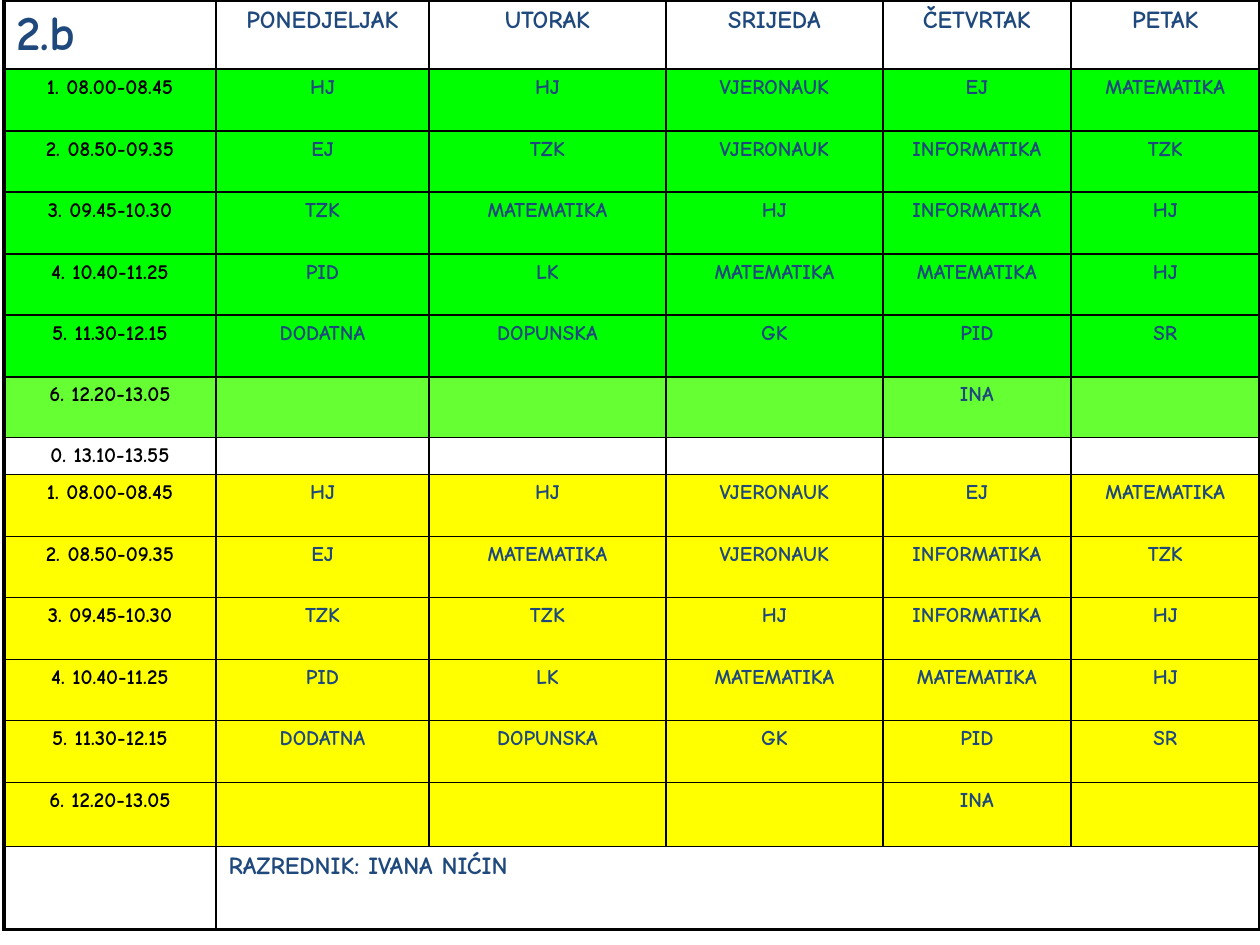
import pptx
import pptx.util
import pptx.dml.color
import pptx.enum.text
import pptx.oxml
import pptx.oxml.ns

RGB = pptx.dml.color.RGBColor
NAVY, BLACK, WHITE = RGB(0x1F, 0x49, 0x7D), RGB(0, 0, 0), RGB(255, 255, 255)
GREEN, LIME, YELLOW = RGB(0, 255, 0), RGB(0x66, 255, 0x33), RGB(255, 255, 0)
FONT = "Comic Neue"
PX = 914400 // 126
THIN, THICK = 1, 2.25

# Content
HEADER = ["2.b", "PONEDJELJAK", "UTORAK", "SRIJEDA", "ČETVRTAK", "PETAK"]
TIMES = ["1. 08.00-08.45", "2. 08.50-09.35", "3. 09.45-10.30",
         "4. 10.40-11.25", "5. 11.30-12.15", "6. 12.20-13.05"]
BREAK = ["0. 13.10-13.55", "", "", "", "", ""]
FOOTER = ["", "RAZREDNIK: IVANA NIĆIN"]
DAYS = [
    ["HJ", "EJ", "TZK", "PID", "DODATNA", ""],
    ["HJ", "TZK", "MATEMATIKA", "LK", "DOPUNSKA", ""],
    ["VJERONAUK", "VJERONAUK", "HJ", "MATEMATIKA", "GK", ""],
    ["EJ", "INFORMATIKA", "INFORMATIKA", "MATEMATIKA", "PID", "INA"],
    ["MATEMATIKA", "TZK", "HJ", "HJ", "SR", ""],
]
# The second shift differs only on Tuesday
TUESDAY_2 = ["HJ", "MATEMATIKA", "TZK", "LK", "DOPUNSKA", ""]
DAYS_2 = [DAYS[0], TUESDAY_2] + DAYS[2:]


def shift(days):
    return [list(row) for row in zip(TIMES, *days)]


ROWS = [HEADER] + shift(DAYS) + [BREAK] + shift(DAYS_2) + [FOOTER]
FILLS = [None] + [GREEN] * 5 + [LIME, WHITE] + [YELLOW] * 6 + [None]
COL_W = [212, 213, 237, 217, 188, 189]
ROW_H = [69] + [62, 61] * 3 + [37] + [62, 61] * 2 + [62, 64, 83]
LAST_ROW, LAST_COL = len(ROW_H) - 1, len(COL_W) - 1


def add_border(cell, side, width):
    ns = pptx.oxml.ns.nsdecls("a")
    cell._tc.get_or_add_tcPr().append(pptx.oxml.parse_xml(
        f'<a:ln{side} {ns} w="{int(width * 12700)}" cap="flat" cmpd="sng">'
        f'<a:solidFill><a:srgbClr val="{BLACK}"/></a:solidFill>'
        f'<a:prstDash val="solid"/></a:ln{side}>'))


def write(cell, text, size, color, align):
    p = cell.text_frame.paragraphs[0]
    p.alignment = align
    f = p.font
    f.name, f.size, f.bold, f.color.rgb = FONT, pptx.util.Pt(size), True, color
    if text:
        p.add_run().text = text
    else:  # keeps an empty row from growing
        p._p.append(pptx.oxml.parse_xml(
            f'<a:endParaRPr {pptx.oxml.ns.nsdecls("a")} sz="{size * 100}"/>'))


prs = pptx.Presentation()
prs.slide_width, prs.slide_height = 1260 * PX, 945 * PX
s = prs.slides.add_slide(prs.slide_layouts[6])

# Timetable grid
table = s.shapes.add_table(len(ROW_H), len(COL_W), 4 * PX, 0,
                           sum(COL_W) * PX, sum(ROW_H) * PX).table
table.first_row = table.horz_banding = False
for column, w in zip(table.columns, COL_W):
    column.width = w * PX
for row, h in zip(table.rows, ROW_H):
    row.height = h * PX
table.cell(LAST_ROW, 1).merge(table.cell(LAST_ROW, LAST_COL))

# Cells
ALIGN = pptx.enum.text.PP_ALIGN
for i, (texts, fill) in enumerate(zip(ROWS, FILLS)):
    for j in range(len(COL_W)):
        cell = table.cell(i, j)
        at_right = j == LAST_COL or (i == LAST_ROW and j > 0)
        for side, outer in (("L", j == 0), ("R", at_right),
                            ("T", i == 0), ("B", i == LAST_ROW)):
            add_border(cell, side, THICK if outer else THIN)
        if fill is None:
            cell.fill.background()
        else:
            cell.fill.solid()
            cell.fill.fore_color.rgb = fill
        if j < len(texts):
            corner = i == 0 and j == 0
            size = 28 if corner else 14 if fill is None else 12
            color = BLACK if j == 0 and fill is not None else NAVY
            left = corner or i == LAST_ROW
            write(cell, texts[j], size, color, ALIGN.LEFT if left else ALIGN.CENTER)

prs.save("out.pptx")
